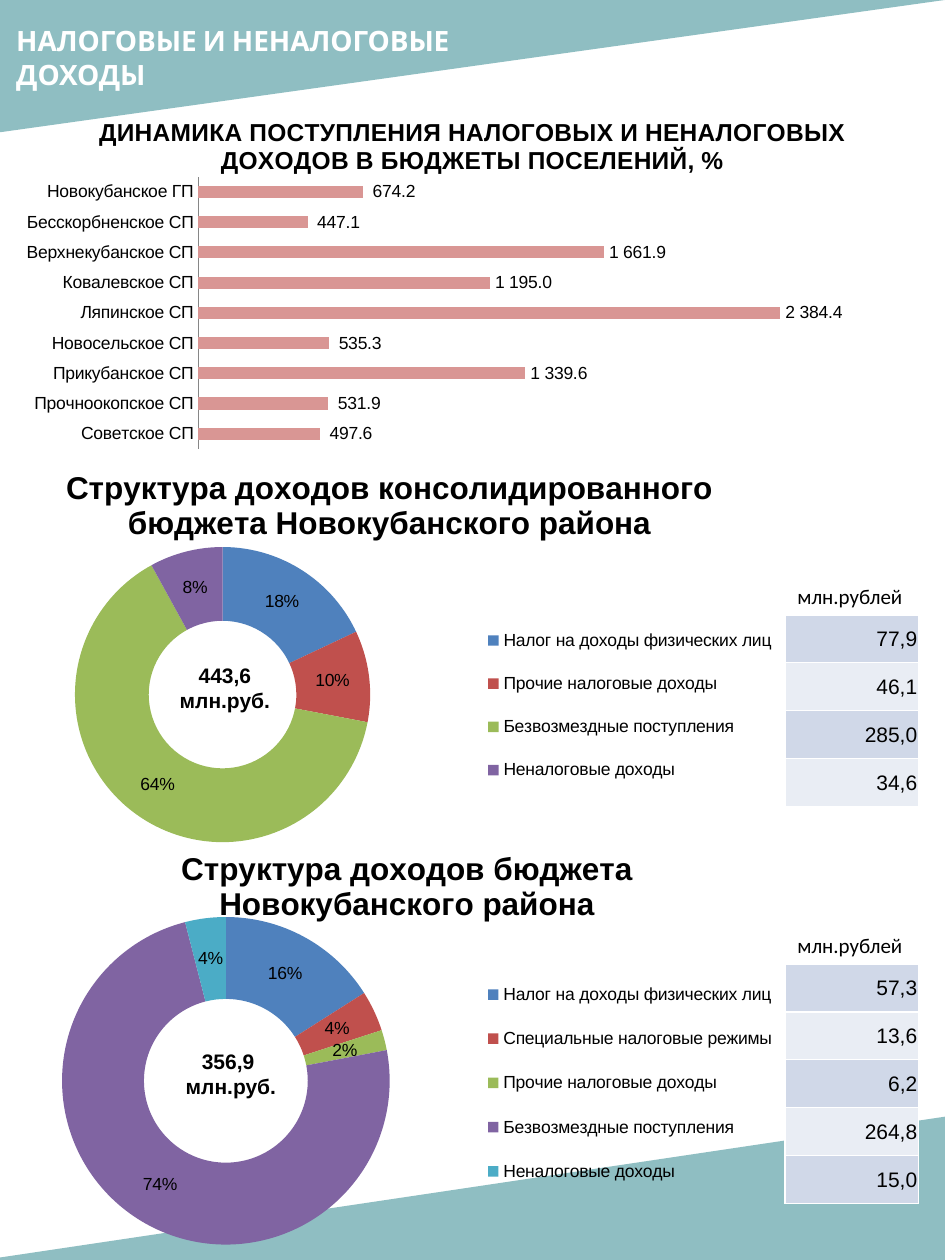
from lxml import etree
from pptx import Presentation
from pptx.chart.data import CategoryChartData
from pptx.dml.color import RGBColor
from pptx.enum import chart as charts, shapes, text
from pptx.oxml import parse_xml
from pptx.oxml.ns import nsdecls, qn
from pptx.util import Inches, Pt

TEAL, BLACK, WHITE = "519AA0", "000000", "FFFFFF"
BANDS = ["D0D8E8", "E9EDF4"]
BLUE, RED, GREEN, PURPLE, AQUA = "4F81BD", "C0504D", "9BBB59", "8064A2", "4BACC6"
THOUSANDS = r"#\ ##0.0"
SETTLEMENTS = {
    "Новокубанское ГП": 674.2, "Бесскорбненское СП": 447.1,
    "Верхнекубанское СП": 1661.9, "Ковалевское СП": 1195,
    "Ляпинское СП": 2384.4, "Новосельское СП": 535.3,
    "Прикубанское СП": 1339.6, "Прочноокопское СП": 531.9,
    "Советское СП": 497.6,
}
CONSOLIDATED = {
    "Налог на доходы физических лиц": 18, "Прочие налоговые доходы": 10,
    "Безвозмездные поступления": 64, "Неналоговые доходы": 8,
}
DISTRICT = {
    "Налог на доходы физических лиц": 16, "Специальные налоговые режимы": 4,
    "Прочие налоговые доходы": 2, "Безвозмездные поступления": 74,
    "Неналоговые доходы": 4,
}


def color(value):
    return RGBColor.from_string(value)


def inches(values):
    return [Inches(value) for value in values]


def style_font(font, size, name="Arial", shade=BLACK, bold=False):
    font.size, font.name, font.bold = Pt(size), name, bold
    font.color.rgb = color(shade)


def add_corner(page, area, flip):
    """Add a translucent right triangle; flip is flipH or flipV."""
    corner = page.shapes.add_shape(shapes.MSO_SHAPE.RIGHT_TRIANGLE, *inches(area))
    corner.shadow.inherit = False
    corner.fill.solid()
    corner.fill.fore_color.rgb = color(TEAL)
    corner.line.fill.background()
    shade = corner.element.spPr.find(qn("a:solidFill"))[0]
    etree.SubElement(shade, qn("a:alpha")).set("val", "64000")
    corner.element.spPr.find(qn("a:xfrm")).set(flip, "1")


def add_text(page, area, lines, size=12, align=text.PP_ALIGN.LEFT, **font):
    box = page.shapes.add_textbox(*inches(area))
    frame = box.text_frame
    frame.word_wrap = True
    frame.auto_size = text.MSO_AUTO_SIZE.SHAPE_TO_FIT_TEXT
    frame.text = "\n".join(lines)
    for para in frame.paragraphs:
        para.alignment = align
        style_font(para.font, size, **font)


def add_borders(cell):
    properties = cell._tc.get_or_add_tcPr()
    for place, side in enumerate(["lnL", "lnR", "lnT", "lnB"]):
        properties.insert(place, parse_xml(
            f'<a:{side} {nsdecls("a")} w="12700"><a:solidFill>'
            f'<a:srgbClr val="{WHITE}"/></a:solidFill></a:{side}>'))


def add_amounts(page, top, amounts):
    """Add a one-column table under its unit of measure."""
    add_text(page, (6.23, top - 0.3, 1.2, 0.3), ["млн.рублей"], name="Calibri")
    area = (6.23, top, 1.06, 0.38 * len(amounts))
    table = page.shapes.add_table(len(amounts), 1, *inches(area)).table
    for index, amount in enumerate(amounts):
        cell = table.cell(index, 0)
        cell.text = amount
        cell.fill.solid()
        cell.fill.fore_color.rgb = color(BANDS[index % 2])
        cell.vertical_anchor = text.MSO_ANCHOR.MIDDLE
        cell.margin_left = cell.margin_right = cell.margin_top = Inches(0.01)
        cell.margin_bottom = 0
        para = cell.text_frame.paragraphs[0]
        para.alignment = text.PP_ALIGN.RIGHT
        style_font(para.font, 12)
        add_borders(cell)


def set_layout(parent, place, area, inner=False):
    """Fix a chart part at fractions of the chart size."""
    for old in parent.findall(qn("c:layout")):
        parent.remove(old)
    target = '<c:layoutTarget val="inner"/>' if inner else ""
    modes = "".join(f'<c:{side}Mode val="edge"/>' for side in "xy")
    sizes = "".join(f'<c:{side} val="{value:.3f}"/>'
                    for side, value in zip("xywh", area))
    parent.insert(place, parse_xml(
        f'<c:layout {nsdecls("c")}><c:manualLayout>{target}{modes}{sizes}'
        '</c:manualLayout></c:layout>'))


def add_chart(page, kind, area, values, title, title_size, plot_area):
    data = CategoryChartData(number_format=THOUSANDS)
    data.categories = list(values)
    data.add_series("Series 1", list(values.values()))
    chart = page.shapes.add_chart(kind, *inches(area), data).chart
    style_font(chart.font, 10)
    chart.has_legend = False
    chart.has_title = True
    chart.chart_title.text_frame.text = title
    style_font(chart.chart_title.text_frame.paragraphs[0].font, title_size, bold=True)
    set_layout(chart.plots[0]._element.getparent(), 0, plot_area, inner=True)
    chart.plots[0].has_data_labels = True
    return chart


def add_bars(page, area, values, title, plot_area):
    chart = add_chart(page, charts.XL_CHART_TYPE.BAR_CLUSTERED, area, values,
                      title, 14, plot_area)
    plot = chart.plots[0]
    plot.vary_by_categories = False
    plot.gap_width, plot.overlap = 150, -25
    fill = plot.series[0].format.fill
    fill.solid()
    fill.fore_color.rgb = color("D99694")
    labels = plot.data_labels
    labels.show_value = True
    labels.number_format, labels.number_format_is_linked = THOUSANDS, False
    labels.position = charts.XL_LABEL_POSITION.OUTSIDE_END
    names, amounts = chart.category_axis, chart.value_axis
    names.reverse_order = True
    names.major_tick_mark = names.minor_tick_mark = charts.XL_TICK_MARK.NONE
    names.format.line.color.rgb = color("868686")
    amounts.visible = amounts.has_major_gridlines = False
    amounts.minimum_scale, amounts.maximum_scale = 0, 3000


def add_ring(page, area, values, colors, title, plot_area, legend_top):
    chart = add_chart(page, charts.XL_CHART_TYPE.DOUGHNUT, area, values,
                      title, 18, plot_area)
    plot = chart.plots[0]
    plot.vary_by_categories = True
    for index, shade in enumerate(colors):
        fill = plot.series[0].points[index].format.fill
        fill.solid()
        fill.fore_color.rgb = color(shade)
    labels = plot.data_labels
    labels.show_percentage, labels.show_value = True, False
    labels.number_format, labels.number_format_is_linked = "0%", False
    chart.has_legend = True
    chart.legend.position = charts.XL_LEGEND_POSITION.RIGHT
    chart.legend.include_in_layout = False
    left, top, width, height = area
    set_layout(chart.legend._element, 1, (
        (3.8 - left) / width, (legend_top - top) / height,
        2.4 / width, 0.39 * len(values) / height))
    return chart


def main():
    deck = Presentation()
    deck.slide_width, deck.slide_height = Inches(7.5), Inches(10)
    page = deck.slides.add_slide(deck.slide_layouts[6])

    add_corner(page, (0, 0, 7.5, 1.05), "flipV")
    add_corner(page, (-0.13, 8.86, 7.65, 1.14), "flipH")
    add_text(page, (0.03, 0.14, 4.51, 0.64), ["НАЛОГОВЫЕ И НЕНАЛОГОВЫЕ ДОХОДЫ"],
             size=16, name="Cabin", shade=WHITE, bold=True)
    add_amounts(page, 4.88, ["77,9", "46,1", "285,0", "34,6"])
    add_amounts(page, 7.65, ["57,3", "13,6", "6,2", "264,8", "15,0"])

    add_bars(page, (0, 0.78, 7.5, 2.9), SETTLEMENTS,
             "ДИНАМИКА ПОСТУПЛЕНИЯ НАЛОГОВЫХ И НЕНАЛОГОВЫХ ДОХОДОВ "
             "В БЮДЖЕТЫ ПОСЕЛЕНИЙ, %", (0.21, 0.215, 0.775, 0.745))
    ring = add_ring(page, (-0.26, 3.66, 6.72, 3.1), CONSOLIDATED,
                    [BLUE, RED, GREEN, PURPLE],
                    "Структура доходов консолидированного бюджета Новокубанского района",
                    (0.127, 0.22, 0.349, 0.756), 4.82)
    set_layout(ring.chart_title._element, 1, (0.11, 0))
    add_text(page, (1.27, 5.21, 1.03, 0.5), ["443,6", "млн.руб."],
             align=text.PP_ALIGN.CENTER, bold=True)
    add_ring(page, (0, 6.56, 6.46, 3.39), DISTRICT,
             [BLUE, RED, GREEN, PURPLE, AQUA],
             "Структура доходов бюджета Новокубанского района",
             (0.076, 0.212, 0.403, 0.767), 7.62)
    add_text(page, (1.32, 8.27, 0.98, 0.5), ["356,9", " млн.руб."],
             align=text.PP_ALIGN.CENTER, bold=True)
    deck.save("out.pptx")


if __name__ == "__main__":
    main()
